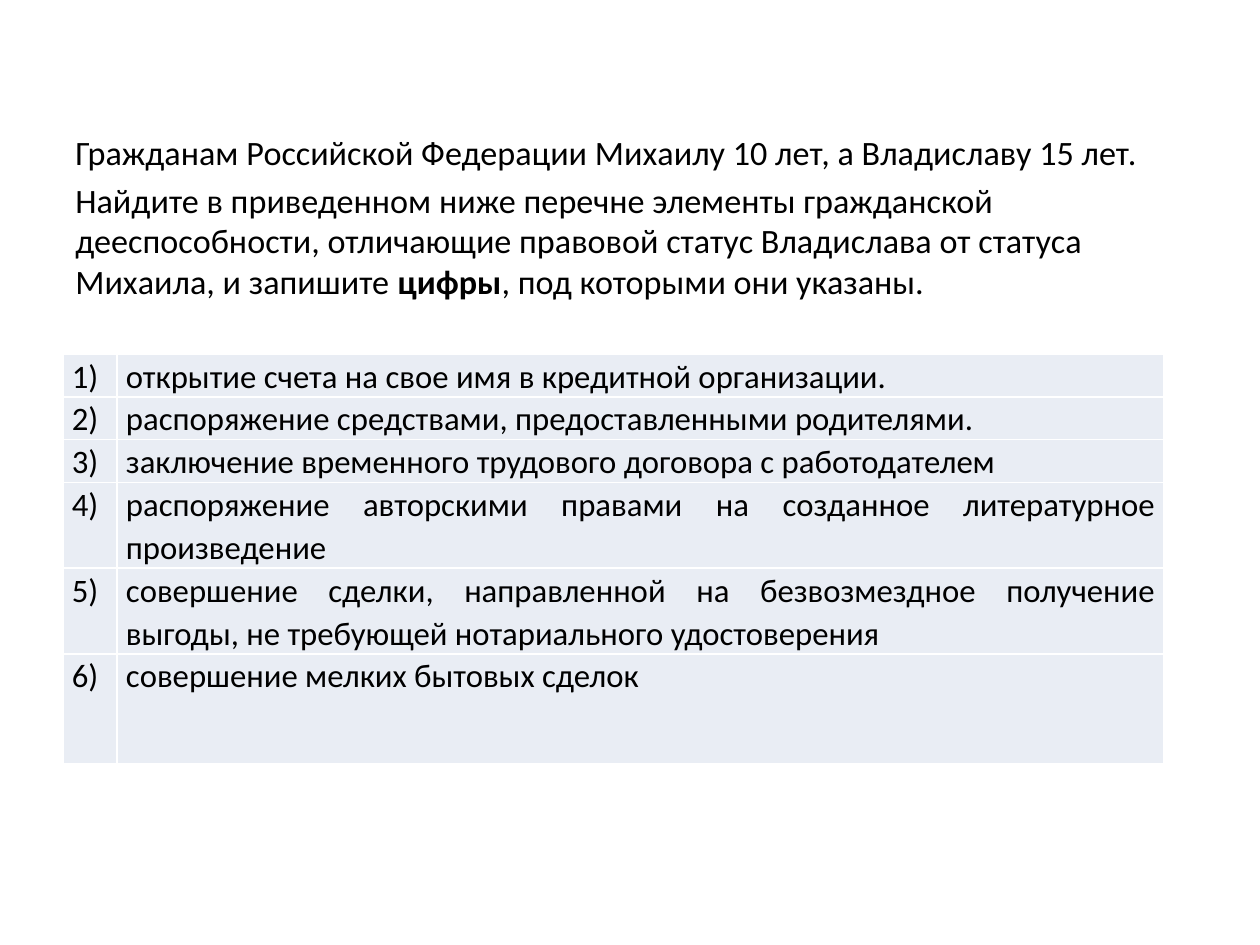
from lxml import etree
from pptx import Presentation
from pptx.dml.color import RGBColor
from pptx.enum.text import PP_ALIGN
from pptx.oxml.ns import qn
from pptx.util import Inches, Pt

BLACK = RGBColor(0x00, 0x00, 0x00)
ROW_FILL = RGBColor(0xE9, 0xED, 0xF4)
BORDER = RGBColor(0xFF, 0xFF, 0xFF)
FONT = "Calibri"

TASK = [
    [("Гражданам Российской Федерации Михаилу 10 лет, а Владиславу 15 лет.", False)],
    [("Найдите в приведенном ниже перечне элементы гражданской дееспособности, "
      "отличающие правовой статус Владислава от статуса Михаила, и запишите ", False),
     ("цифры", True),
     (", под которыми они указаны.", False)],
]
# Answer text and row height in inches
ANSWERS = [
    ("открытие счета на свое имя в кредитной организации.", 0.34),
    ("распоряжение средствами, предоставленными родителями.", 0.34),
    ("заключение временного трудового договора с работодателем", 0.34),
    ("распоряжение авторскими правами на созданное литературное произведение", 0.68),
    ("совершение сделки, направленной на безвозмездное получение выгоды, "
     "не требующей нотариального удостоверения", 0.68),
    ("совершение мелких бытовых сделок", 0.87),
]


def set_font(p, size):
    p.font.name = FONT
    p.font.size = Pt(size)
    p.font.color.rgb = BLACK


def add_borders(cell):
    tcPr = cell._tc.get_or_add_tcPr()
    for i, side in enumerate(("a:lnL", "a:lnR", "a:lnT", "a:lnB")):
        ln = etree.Element(qn(side), w=str(Pt(1)))
        fill = etree.SubElement(ln, qn("a:solidFill"))
        etree.SubElement(fill, qn("a:srgbClr"), val=str(BORDER))
        tcPr.insert(i, ln)


prs = Presentation()
prs.slide_width, prs.slide_height = Inches(10), Inches(7.5)
s = prs.slides.add_slide(prs.slide_layouts[6])

# Task statement
tf = s.shapes.add_textbox(Inches(0.5), Inches(0.99), Inches(9), Inches(5.66)).text_frame
tf.word_wrap = True
for i, runs in enumerate(TASK):
    p = tf.add_paragraph() if i else tf.paragraphs[0]
    if i:
        p.space_before = Pt(4)
    set_font(p, 19.5)
    for text, bold in runs:
        r = p.add_run()
        r.text = text
        r.font.bold = bold

# Numbered answers
height = sum(h for _, h in ANSWERS)
table = s.shapes.add_table(len(ANSWERS), 2, Inches(0.5), Inches(2.81),
                           Inches(8.74), Inches(height)).table
table.first_row = table.horz_banding = False
table.columns[0].width, table.columns[1].width = Inches(0.43), Inches(8.31)
for i, (answer, row_height) in enumerate(ANSWERS):
    table.rows[i].height = Inches(row_height)
    for j, text in enumerate((f"{i + 1})", answer)):
        cell = table.cell(i, j)
        cell.fill.solid()
        cell.fill.fore_color.rgb = ROW_FILL
        cell.margin_left = cell.margin_right = Inches(0.07)
        cell.margin_top = cell.margin_bottom = 0
        add_borders(cell)
        p = cell.text_frame.paragraphs[0]
        p.text = text
        p.alignment = PP_ALIGN.JUSTIFY
        p.line_spacing = 1.07
        set_font(p, 18.7)

prs.save("out.pptx")
